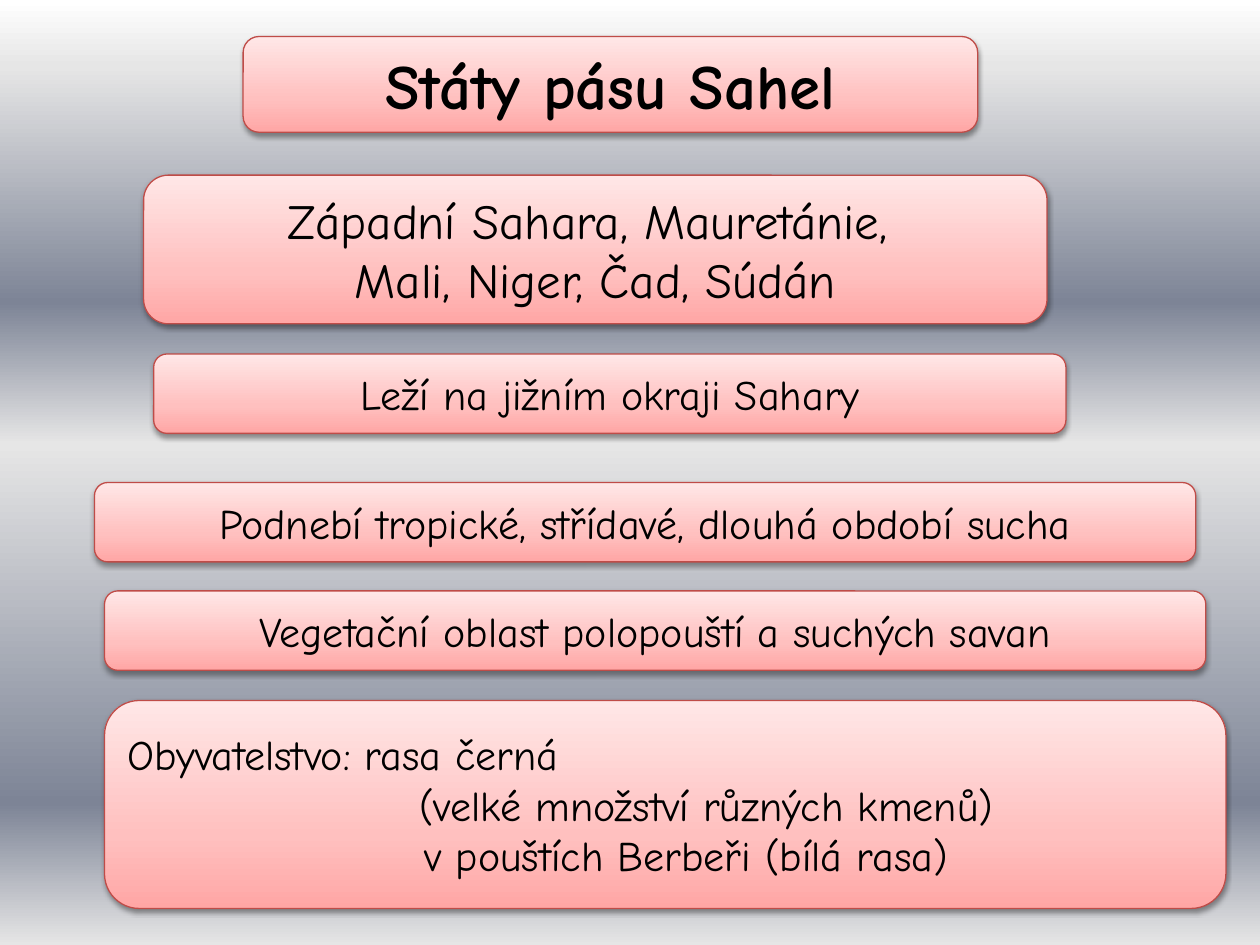
"""Build the slide about the states of the Sahel belt."""
from lxml.etree import SubElement
from pptx import Presentation
from pptx.dml.color import RGBColor
from pptx.enum.shapes import MSO_SHAPE
from pptx.enum.text import MSO_ANCHOR, PP_ALIGN
from pptx.oxml.ns import qn
from pptx.util import Inches, Pt

THEME = {
    "font": "Comic Neue",
    "text": "000000",
    "line": "BF4C48",
    "title": 36,
    "states": 28,
    "body": 24,
    "box": [(0, "FFA6A5"), (35, "FFC0BF"), (100, "FFE7E7")],
    "background": [(0, "FFFFFF"), (7, "E6E6E6"), (32, "7D8496"),
                   (47, "E6E6E6"), (85, "7D8496"), (100, "E6E6E6")],
}
CENTER, LEFT = PP_ALIGN.CENTER, PP_ALIGN.LEFT

BOXES = [
    ((1.93, 0.29, 5.83, 0.76), "title", [("Státy pásu Sahel", CENTER, 0)]),
    ((1.22, 2.81, 7.24, 0.63), "body", [("Leží na jižním okraji Sahary", CENTER, 0)]),
    ((0.75, 3.83, 8.74, 0.63), "body",
     [("Podnebí tropické, střídavé, dlouhá období sucha", CENTER, 0)]),
    ((0.83, 5.56, 8.9, 1.65), "body",
     [("Obyvatelstvo: rasa černá", LEFT, 0),
      ("(velké množství různých kmenů)", CENTER, 0.65),
      ("v pouštích Berbeři (bílá rasa)", CENTER, 0.33)]),
    ((1.14, 1.39, 7.17, 1.18), "states",
     [("Západní Sahara, Mauretánie, ", CENTER, 0),
      ("Mali, Niger, Čad, Súdán", CENTER, 0)]),
    ((0.83, 4.69, 8.74, 0.63), "body",
     [("Vegetační oblast polopouští a suchých savan", CENTER, 0)]),
]


def set_gradient(fill, element, stops, angle):
    fill.gradient()
    grad = next(element.iter(qn("a:gradFill")))
    stop_list = grad.find(qn("a:gsLst"))
    for old in list(stop_list):
        stop_list.remove(old)
    for pos, color in stops:
        stop = SubElement(stop_list, qn("a:gs"), pos=str(pos * 1000))
        SubElement(stop, qn("a:srgbClr"), val=color)
    grad.find(qn("a:lin")).set("ang", str(angle * 60000))


def add_shadow(sp):
    sp.shadow.inherit = False
    effects = sp.element.spPr.find(qn("a:effectLst"))
    shadow = SubElement(effects, qn("a:outerShdw"), blurRad=str(Pt(3.1)),
                        dist=str(Pt(1.6)), dir="5400000", rotWithShape="0")
    color = SubElement(shadow, qn("a:srgbClr"), val="000000")
    SubElement(color, qn("a:alpha"), val="38000")


def add_box(s, place, size, lines):
    sp = s.shapes.add_shape(MSO_SHAPE.ROUNDED_RECTANGLE, *map(Inches, place))
    set_gradient(sp.fill, sp.element, THEME["box"], 270)
    sp.line.color.rgb = RGBColor.from_string(THEME["line"])
    sp.line.width = Pt(0.75)
    add_shadow(sp)
    tf = sp.text_frame
    tf.word_wrap = True
    tf.vertical_anchor = MSO_ANCHOR.MIDDLE
    for i, (text, align, indent) in enumerate(lines):
        p = tf.add_paragraph() if i else tf.paragraphs[0]
        p.text = text
        p.alignment = align
        p.font.name = THEME["font"]
        p.font.size = Pt(THEME[size])
        p.font.bold = size == "title"
        p.font.color.rgb = RGBColor.from_string(THEME["text"])
        for r in p.runs:
            r.font.color.rgb = RGBColor.from_string(THEME["text"])
            r.font.name = THEME["font"]
            r.font.size = Pt(THEME[size])
            r.font.bold = size == "title"
        if indent:
            p._p.get_or_add_pPr().set("marL", str(Inches(indent)))


def main():
    prs = Presentation()
    prs.slide_width, prs.slide_height = Inches(10), Inches(7.5)
    s = prs.slides.add_slide(prs.slide_layouts[6])
    set_gradient(s.background.fill, s.element, THEME["background"], 90)
    for place, size, lines in BOXES:
        add_box(s, place, size, lines)
    prs.save("out.pptx")


if __name__ == "__main__":
    main()
